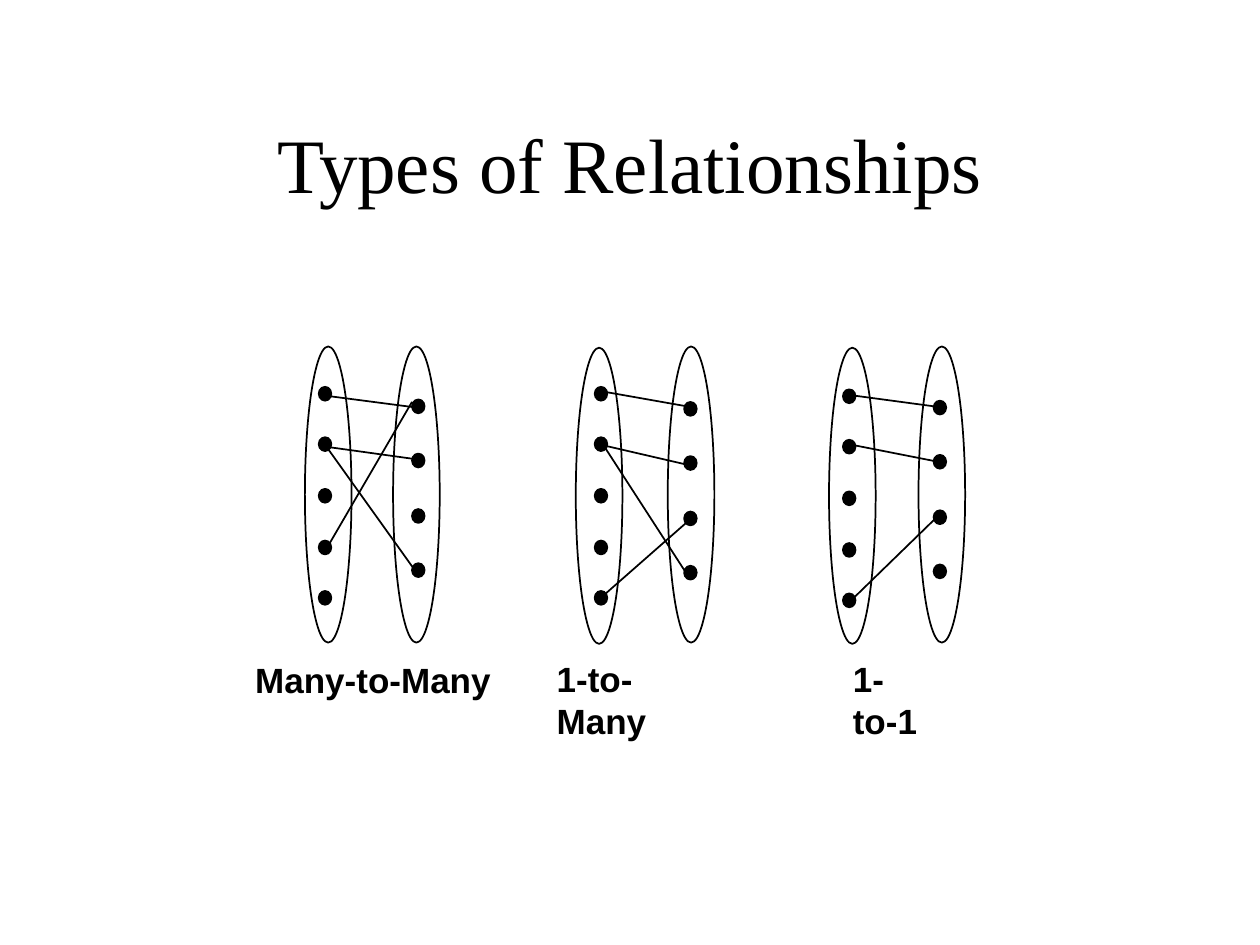
from dataclasses import dataclass

from lxml.etree import SubElement
from pptx import Presentation
from pptx.dml.color import RGBColor
from pptx.enum.shapes import MSO_CONNECTOR, MSO_SHAPE
from pptx.enum.text import MSO_ANCHOR as Anchor, PP_ALIGN as Align
from pptx.oxml.ns import qn
from pptx.util import Emu, Pt

PX = 9144  # EMU per px, 100 px to the inch
COLORS = {"ink": "000000", "paper": "FFFFFF"}
SET_WIDTH, SET_HEIGHT = 37, 235
DOT_WIDTH, DOT_HEIGHT = 10, 11


@dataclass
class EntitySet:
    left: int
    top: int
    dot_left: int
    dot_top: int
    dot_count: int
    dot_span: int  # from the top of the first dot to the top of the last


@dataclass
class Label:
    text: str
    box: tuple[int, int, int, int]
    align: Align = Align.LEFT


@dataclass
class Relationship:
    label: Label
    sets: tuple[EntitySet, EntitySet]
    links: list[tuple[int, int, int, int]]  # x1, y1, x2, y2


RELATIONSHIPS = [
    Relationship(
        Label("1-to-1", (667, 517, 91, 43)),
        (EntitySet(658, 276, 669, 309, 5, 162), EntitySet(729, 275, 741, 318, 4, 130)),
        [(678, 314, 745, 323), (676, 353, 747, 367), (674, 478, 745, 409)],
    ),
    Relationship(
        Label("1-to-Many", (432, 517, 146, 43)),
        (EntitySet(457, 276, 472, 307, 5, 162), EntitySet(530, 275, 543, 319, 4, 130)),
        [(480, 311, 548, 323), (477, 353, 546, 369),
         (480, 355, 546, 457), (548, 412, 474, 477)],
    ),
    Relationship(
        Label("Many-to-Many", (192, 518, 208, 43), Align.CENTER),
        (EntitySet(242, 275, 253, 307, 5, 162), EntitySet(312, 275, 327, 317, 4, 130)),
        [(258, 314, 327, 323), (262, 355, 334, 365),
         (260, 434, 327, 319), (258, 353, 331, 455)],
    ),
]


def px(*lengths: int) -> list[Emu]:
    return [Emu(length * PX) for length in lengths]


def color(name: str) -> RGBColor:
    return RGBColor.from_string(COLORS[name])


def write_text(shape, text: str, *, font: str, size: int, bold: bool = False,
               align: Align = Align.LEFT, anchor: Anchor = Anchor.TOP) -> None:
    frame = shape.text_frame
    frame.word_wrap = True
    frame.vertical_anchor = anchor
    frame.margin_left, frame.margin_top, frame.margin_right, frame.margin_bottom = px(10, 5, 10, 5)
    para = frame.paragraphs[0]
    para.alignment = align
    span = para.add_run()
    span.text = text
    span.font.name, span.font.size, span.font.bold = font, Pt(size), bold
    span.font.color.rgb = color("ink")


def set_line(shape) -> None:
    shape.line.color.rgb = color("ink")
    shape.line.width = Pt(1)


def add_oval(page, left: int, top: int, width: int, height: int, filled: bool) -> None:
    oval = page.shapes.add_shape(MSO_SHAPE.OVAL, *px(left, top, width, height))
    oval.shadow.inherit = False
    if filled:
        oval.fill.solid()
        oval.fill.fore_color.rgb = color("ink")
    else:
        oval.fill.background()
    set_line(oval)


def add_link(page, link: tuple[int, int, int, int]) -> None:
    connector = page.shapes.add_connector(MSO_CONNECTOR.STRAIGHT, *px(*link))
    set_line(connector)
    SubElement(connector._element.spPr, qn("a:effectLst"))


def add_dots(page, group: EntitySet) -> None:
    for index in range(group.dot_count):
        top = group.dot_top + round(index * group.dot_span / (group.dot_count - 1))
        add_oval(page, group.dot_left, top, DOT_WIDTH, DOT_HEIGHT, filled=True)


def add_relationship(page, relationship: Relationship) -> None:
    label = relationship.label
    box = page.shapes.add_textbox(*px(*label.box))
    write_text(box, label.text, font="Arial", size=20, bold=True, align=label.align)
    for group in relationship.sets:
        add_oval(page, group.left, group.top, SET_WIDTH, SET_HEIGHT, filled=False)
    for link in relationship.links:
        add_link(page, link)
    for group in relationship.sets:
        add_dots(page, group)


def main() -> None:
    deck = Presentation()
    deck.slide_width, deck.slide_height = px(1000, 750)
    page = deck.slides.add_slide(deck.slide_layouts[5])
    page.background.fill.solid()
    page.background.fill.fore_color.rgb = color("paper")

    title = page.shapes.title
    title.left, title.top, title.width, title.height = px(75, 67, 850, 125)
    write_text(title, "Types of Relationships", font="Times New Roman", size=44,
               align=Align.CENTER, anchor=Anchor.MIDDLE)
    for relationship in RELATIONSHIPS:
        add_relationship(page, relationship)
    deck.save("out.pptx")


if __name__ == "__main__":
    main()
